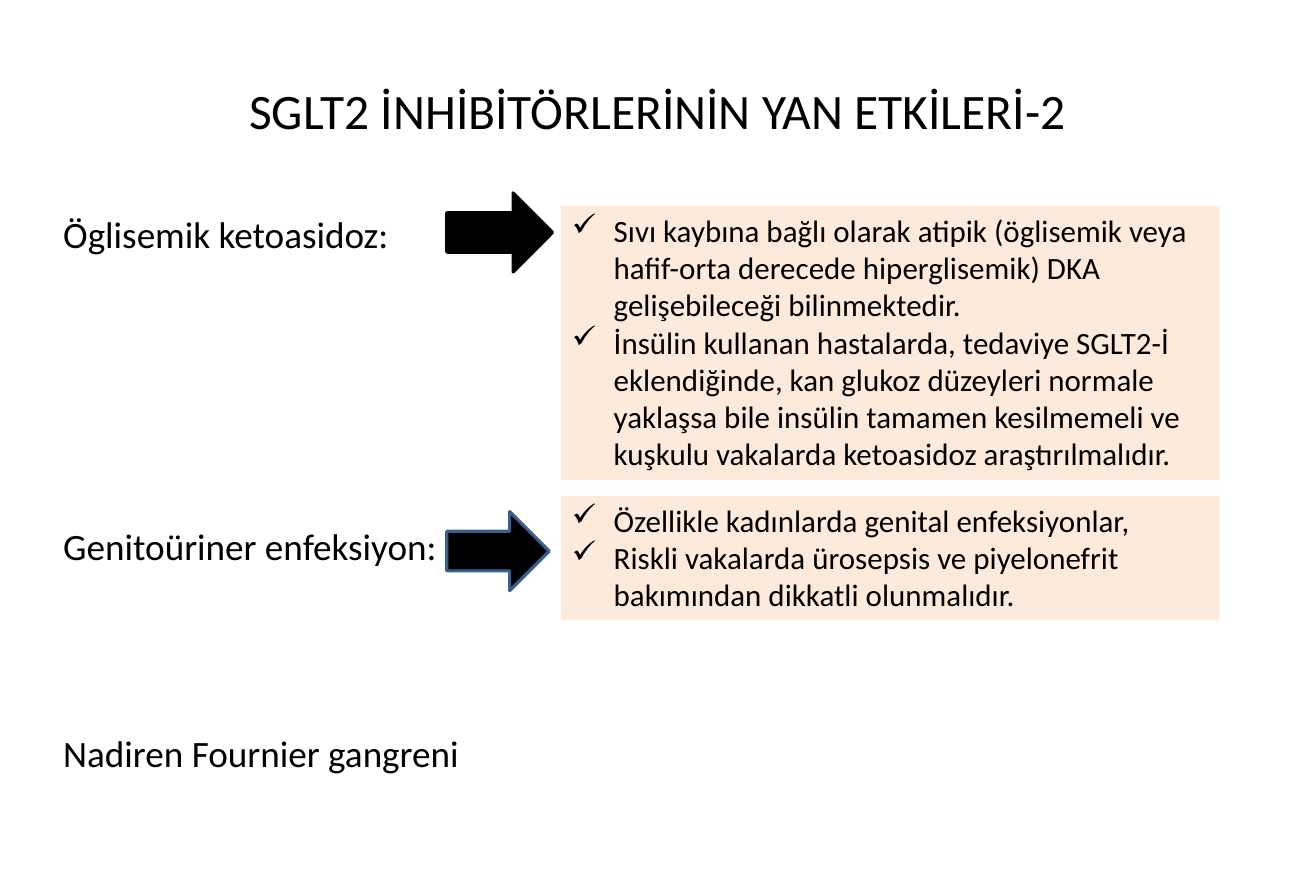
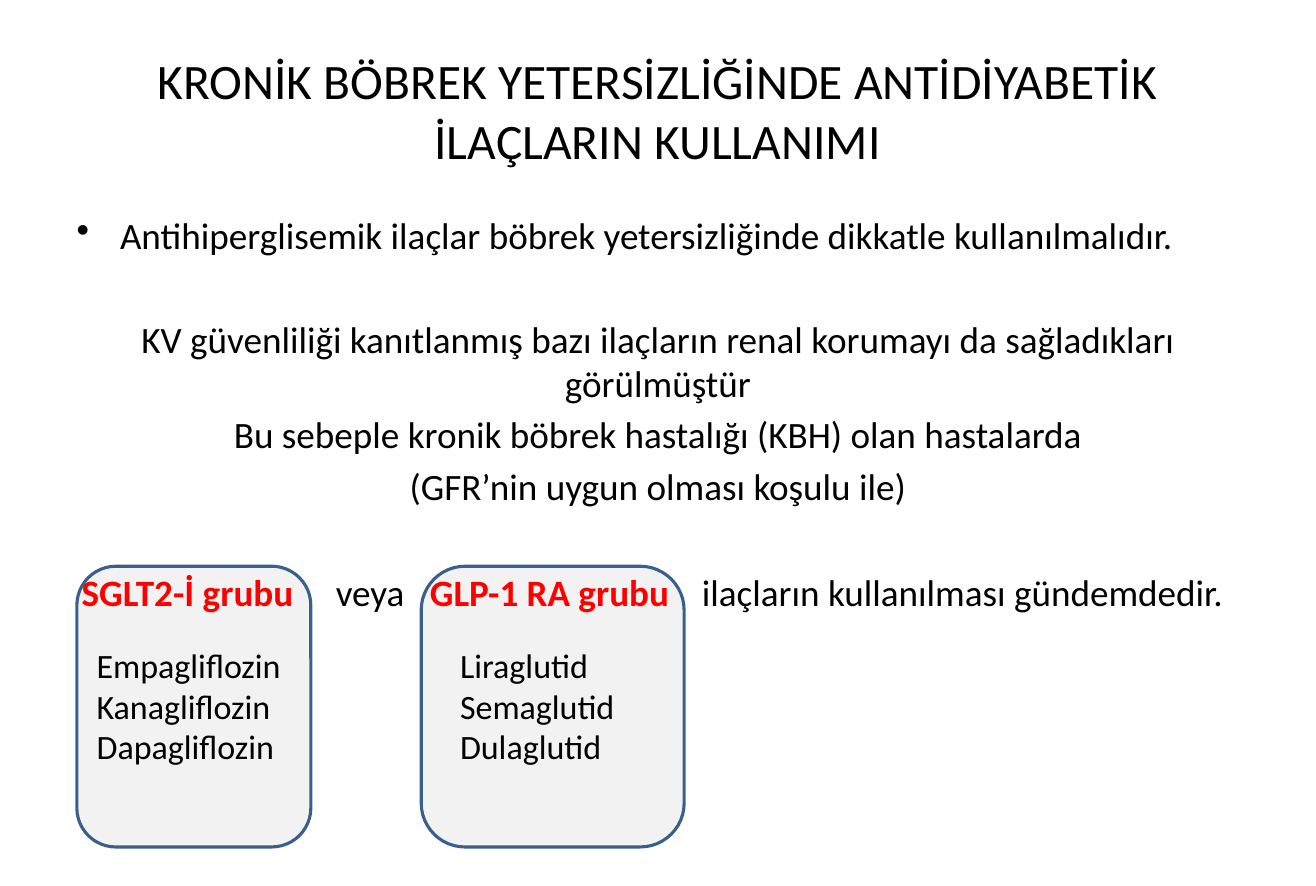
from lxml import etree
from pptx import Presentation
from pptx.dml.color import RGBColor
from pptx.enum.shapes import MSO_SHAPE
from pptx.enum.text import MSO_ANCHOR, MSO_AUTO_SIZE, PP_ALIGN
from pptx.oxml.ns import qn
from pptx.util import Pt

RECTANGLE = MSO_SHAPE.RECTANGLE
ROUNDED = MSO_SHAPE.ROUNDED_RECTANGLE
ARROW = MSO_SHAPE.RIGHT_ARROW
LEFT, CENTER = PP_ALIGN.LEFT, PP_ALIGN.CENTER
TOP, MIDDLE = MSO_ANCHOR.TOP, MSO_ANCHOR.MIDDLE
NO_AUTOFIT = MSO_AUTO_SIZE.NONE
TITLE_ONLY = 5

FONT = "Calibri"
BLACK, RED, BLUE = "000000", "FF0000", "3A5F8C"
PEACH, GRAY = "FDEADA", "F2F2F2"
ROW_HEIGHT = 33.6
ROW_GAP = 4.3


def color(value):
    return RGBColor.from_string(value)


def rows_before(count):
    return count * ROW_HEIGHT + ROW_GAP


class Builder:
    def __init__(self, width, height):
        self.deck = Presentation()
        self.deck.slide_width = Pt(width)
        self.deck.slide_height = Pt(height)
        self.page = None

    def start_page(self, title):
        self.page = self.deck.slides.add_slide(self.deck.slide_layouts[TITLE_ONLY])
        box = self.page.shapes.title
        box.left, box.top, box.width, box.height = Pt(42.5), Pt(23), Pt(765.4), Pt(95.8)
        self.prepare_frame(box, MIDDLE)
        box.text_frame.text = title
        self.format_para(box.text_frame.paragraphs[0], 32, CENTER)

    def prepare_frame(self, box, anchor=TOP):
        frame = box.text_frame
        frame.word_wrap = True
        frame.auto_size = NO_AUTOFIT
        frame.vertical_anchor = anchor
        frame.margin_left = frame.margin_right = Pt(7.2)
        frame.margin_top = frame.margin_bottom = Pt(3.6)

    def format_span(self, span, size, ink=BLACK, bold=False):
        span.font.name = FONT
        span.font.size = Pt(size)
        span.font.bold = bold
        span.font.color.rgb = color(ink)

    def format_para(self, para, size, align=LEFT):
        para.alignment = align
        for span in para.runs:
            self.format_span(span, size)

    def add_bullet(self, para, mark, indent):
        properties = para._p.get_or_add_pPr()
        properties.set("marL", str(Pt(indent)))
        properties.set("indent", str(-Pt(indent)))
        etree.SubElement(properties, qn("a:buChar")).set("char", mark)

    def shape(self, kind, left, top, width, height, fill, line=None):
        shape = self.page.shapes.add_shape(kind, Pt(left), Pt(top), Pt(width), Pt(height))
        shape.shadow.inherit = False
        shape.fill.solid()
        shape.fill.fore_color.rgb = color(fill)
        if line:
            shape.line.color.rgb = color(line)
            shape.line.width = Pt(2)
        else:
            shape.line.fill.background()
        return shape

    def panel(self, left, top, width, height, fill, lines, size, mark=None):
        box = self.shape(RECTANGLE, left, top, width, height, fill)
        self.prepare_frame(box)
        box.text_frame.text = "\n".join(lines)
        for para in box.text_frame.paragraphs:
            if mark:
                self.add_bullet(para, mark, 27)
            self.format_para(para, size)

    def text_box(self, left, top, width, height):
        box = self.page.shapes.add_textbox(Pt(left), Pt(top), Pt(width), Pt(height))
        self.prepare_frame(box)
        return box.text_frame

    def body(self, left, top, width, height, items):
        frame = self.text_box(left, top, width, height)
        frame.text = "\n".join(text for text, *_ in items)
        for para, (_, skipped_rows, align, mark) in zip(frame.paragraphs, items):
            if skipped_rows is not None:
                para.space_before = Pt(rows_before(skipped_rows))
            if mark:
                self.add_bullet(para, mark, 28)
            self.format_para(para, 24, align)

    def tabbed_line(self, left, top, width, height, spans, stops):
        para = self.text_box(left, top, width, height).paragraphs[0]
        tabs = etree.SubElement(para._p.get_or_add_pPr(), qn("a:tabLst"))
        for stop in stops:
            tab = etree.SubElement(tabs, qn("a:tab"))
            tab.set("pos", str(Pt(stop)))
            tab.set("algn", "l")
        for text, ink, bold in spans:
            span = para.add_run()
            span.text = text
            self.format_span(span, 24, ink, bold)


def side_effects(builder):
    builder.start_page("SGLT2 İNHİBİTÖRLERİNİN YAN ETKİLERİ-2")
    builder.body(33.8, 133.2, 765.4, 378, [
        ("Öglisemik ketoasidoz:", None, LEFT, None),
        ("Genitoüriner enfeksiyon:", 5, LEFT, None),
        ("Nadiren Fournier gangreni", 3, LEFT, None),
    ])
    panels = [
        (133.2, 177.1, [
            "Sıvı kaybına bağlı olarak atipik (öglisemik veya hafif-orta derecede "
            "hiperglisemik) DKA gelişebileceği bilinmektedir.",
            "İnsülin kullanan hastalarda, tedaviye SGLT2-İ eklendiğinde, kan glukoz "
            "düzeyleri normale yaklaşsa bile insülin tamamen kesilmemeli ve kuşkulu "
            "vakalarda ketoasidoz araştırılmalıdır.",
        ]),
        (320.4, 79.9, [
            "Özellikle kadınlarda genital enfeksiyonlar,",
            "Riskli vakalarda ürosepsis ve piyelonefrit bakımından dikkatli olunmalıdır.",
        ]),
    ]
    for top, height, lines in panels:
        builder.panel(362.5, top, 425.5, height, PEACH, lines, 20, "✓")
    for top, width, line in [(124.6, 68.4, BLACK), (330.5, 66.2, BLUE)]:
        builder.shape(ARROW, 288.7, top, width, 51.1, BLACK, line)


def kidney_failure(builder):
    builder.start_page("KRONİK BÖBREK YETERSİZLİĞİNDE ANTİDİYABETİK İLAÇLARIN KULLANIMI")
    groups = [
        (49.7, 151.2, 55.4, 139.7, ["Empagliflozin", "Kanagliflozin", "Dapagliflozin"]),
        (272.2, 169.9, 290.2, 141.1, ["Liraglutid", "Semaglutid", "Dulaglutid"]),
    ]
    for left, width, list_left, list_width, drugs in groups:
        builder.shape(ROUNDED, left, 365.8, width, 181.4, GRAY, BLUE)
        builder.panel(list_left, 412.6, list_width, 87.1, GRAY, drugs, 22)
    builder.body(42.5, 133.9, 765.4, 210, [
        ("Antihiperglisemik ilaçlar böbrek yetersizliğinde dikkatle kullanılmalıdır.",
         None, LEFT, "•"),
        ("KV güvenliliği kanıtlanmış bazı ilaçların renal korumayı da sağladıkları "
         "görülmüştür", 1, CENTER, None),
        ("Bu sebeple kronik böbrek hastalığı (KBH) olan hastalarda", 0, CENTER, None),
        ("(GFR’nin uygun olması koşulu ile)", 0, CENTER, None),
    ])
    builder.tabbed_line(45.7, 364.6, 770, 37, [
        ("SGLT2-İ grubu", RED, True),
        ("\tveya\t", BLACK, False),
        ("GLP-1 RA grubu", RED, True),
        ("\tilaçların kullanılması gündemdedir.", BLACK, False),
    ], [164.2, 225, 400.8])


def main():
    builder = Builder(850.4, 572.4)
    side_effects(builder)
    kidney_failure(builder)
    builder.deck.save("out.pptx")


if __name__ == "__main__":
    main()
